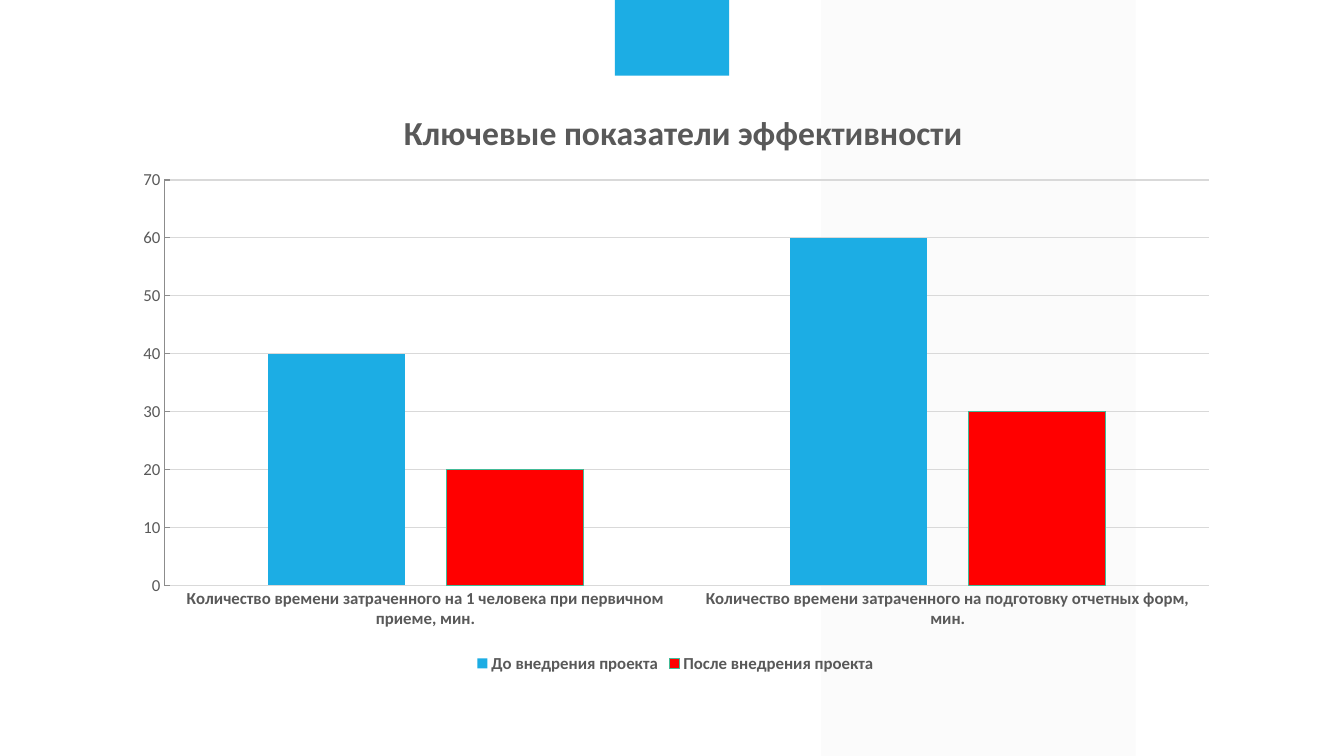
from dataclasses import dataclass

from lxml import etree
from pptx import Presentation
from pptx import util as u
from pptx.chart.data import CategoryChartData
from pptx.dml.color import RGBColor
from pptx.enum import chart as ch
from pptx.enum import shapes
from pptx.oxml import ns


@dataclass(frozen=True)
class Theme:
    font: str = "Calibri"
    blue: str = "1CADE4"
    red: str = "FF0000"
    green: str = "42BA97"
    ink: str = "595959"
    axis: str = "8C8C8C"
    grid: str = "D9D9D9"
    band: str = "F2F2F2"
    head: float = 24
    body: float = 12
    rule: float = 0.75


T = Theme()
W, H = u.Inches(13.33), u.Inches(7.5)


def rgb(code):
    return RGBColor.from_string(code)


def sub(node, tag, **attrs):
    return etree.SubElement(node, ns.qn(tag), attrs)


def style(font, size=T.body, bold=False):
    font.name, font.size, font.bold = T.font, u.Pt(size), bold
    font.color.rgb = rgb(T.ink)


def stroke(line, color):
    line.color.rgb = rgb(color)
    line.width = u.Pt(T.rule)


def panel(slide, box, kind, color, alpha=100):
    part = slide.shapes.add_shape(kind, *box)
    part.shadow.inherit = False
    part.fill.solid()
    part.fill.fore_color.rgb = rgb(color)
    part.line.fill.background()
    if alpha < 100:
        tint = part.fill._xPr.find(".//" + ns.qn("a:srgbClr"))
        sub(tint, "a:alpha", val=str(alpha * 1000))
    return part


def place(node, **shares):
    """Pin a chart part at shares of the chart's size."""
    old = node.find(ns.qn("c:layout"))
    if old is not None:
        node.remove(old)
    lay = etree.Element(ns.qn("c:layout"))
    man = sub(lay, "c:manualLayout")
    if "w" in shares:
        sub(man, "c:layoutTarget", val="inner")
    for key in "xy":
        sub(man, f"c:{key}Mode", val="edge")
    for key, share in shares.items():
        sub(man, f"c:{key}", val=str(share))
    words = node.find(ns.qn("c:tx"))
    if words is None:
        node.insert(0, lay)
    else:
        words.addnext(lay)


def decor(slide, w, h):
    # Pale band and top tab
    band = panel(slide, (int(w * 0.611), 0, int(w * 0.234), h),
                 shapes.MSO_SHAPE.PARALLELOGRAM, T.band, 30)
    band.adjustments[0] = 0
    panel(slide, (int(w * 0.4575), 0, int(w * 0.085), int(h * 0.1)),
          shapes.MSO_SHAPE.RECTANGLE, T.blue)


def bars(slide, box, title, cats, series):
    data = CategoryChartData()
    data.categories = cats
    for name, vals, _ in series:
        data.add_series(name, vals)
    chart = slide.shapes.add_chart(
        ch.XL_CHART_TYPE.COLUMN_CLUSTERED, *box, data).chart
    style(chart.font)

    # Title
    chart.has_title = True
    para = chart.chart_title.text_frame.paragraphs[0]
    para.text = title
    style(para.font, T.head, True)
    chart.chart_title.include_in_layout = False
    place(chart.chart_title._element, x=0.25, y=0.04)

    # Axes
    cat, val = chart.category_axis, chart.value_axis
    cat.major_tick_mark = ch.XL_TICK_MARK.NONE
    style(cat.tick_labels.font, bold=True)
    stroke(cat.format.line, T.grid)
    val.minimum_scale, val.maximum_scale, val.major_unit = 0, 70, 10
    val.major_tick_mark = ch.XL_TICK_MARK.INSIDE
    style(val.tick_labels.font)
    stroke(val.format.line, T.axis)
    stroke(val.major_gridlines.format.line, T.grid)

    # Columns
    plot = chart.plots[0]
    plot.gap_width, plot.overlap, plot.vary_by_categories = 150, -30, False
    for bar, (_, _, color) in zip(plot.series, series):
        bar.format.fill.solid()
        bar.format.fill.fore_color.rgb = rgb(color)
        if color == T.red:
            stroke(bar.format.line, T.green)
        else:
            bar.format.line.fill.background()
    place(chart._chartSpace.chart.plotArea, x=0.04, y=0.168, w=0.94, h=0.678)

    # Legend
    chart.has_legend = True
    chart.legend.position = ch.XL_LEGEND_POSITION.BOTTOM
    chart.legend.include_in_layout = False
    style(chart.legend.font, bold=True)


def main():
    deck = Presentation()
    deck.slide_width, deck.slide_height = W, H
    slide = deck.slides.add_slide(deck.slide_layouts[6])
    decor(slide, W, H)
    bars(slide, [u.Inches(n) for n in (1.19, 0.79, 11.02, 5.93)],
         "Ключевые показатели эффективности",
         ["Количество времени затраченного на 1 человека при первичном приеме, мин.",
          "Количество времени затраченного на подготовку отчетных форм, мин."],
         [("До внедрения проекта", (40, 60), T.blue),
          ("После внедрения проекта", (20, 30), T.red)])
    deck.save("out.pptx")


if __name__ == "__main__":
    main()
